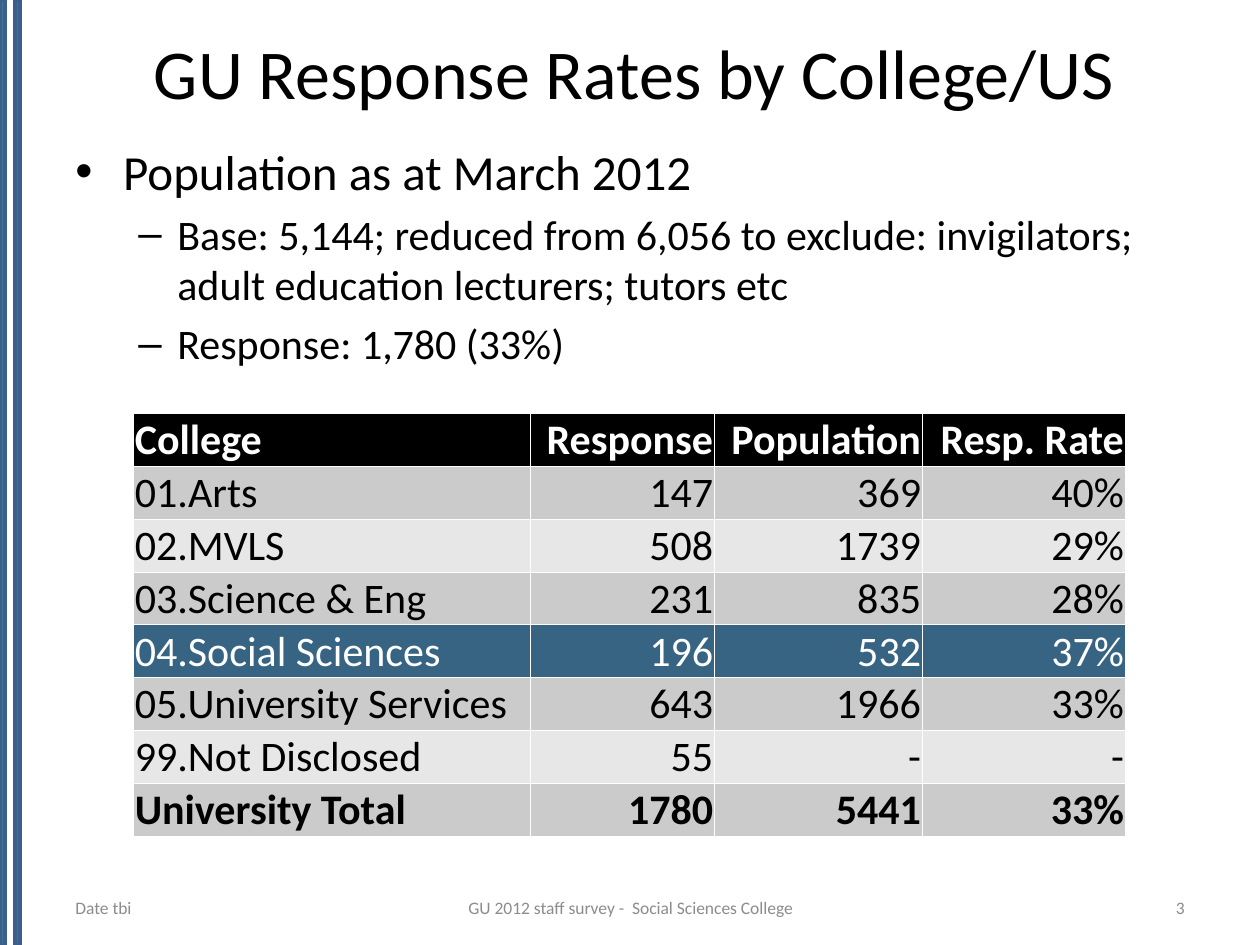
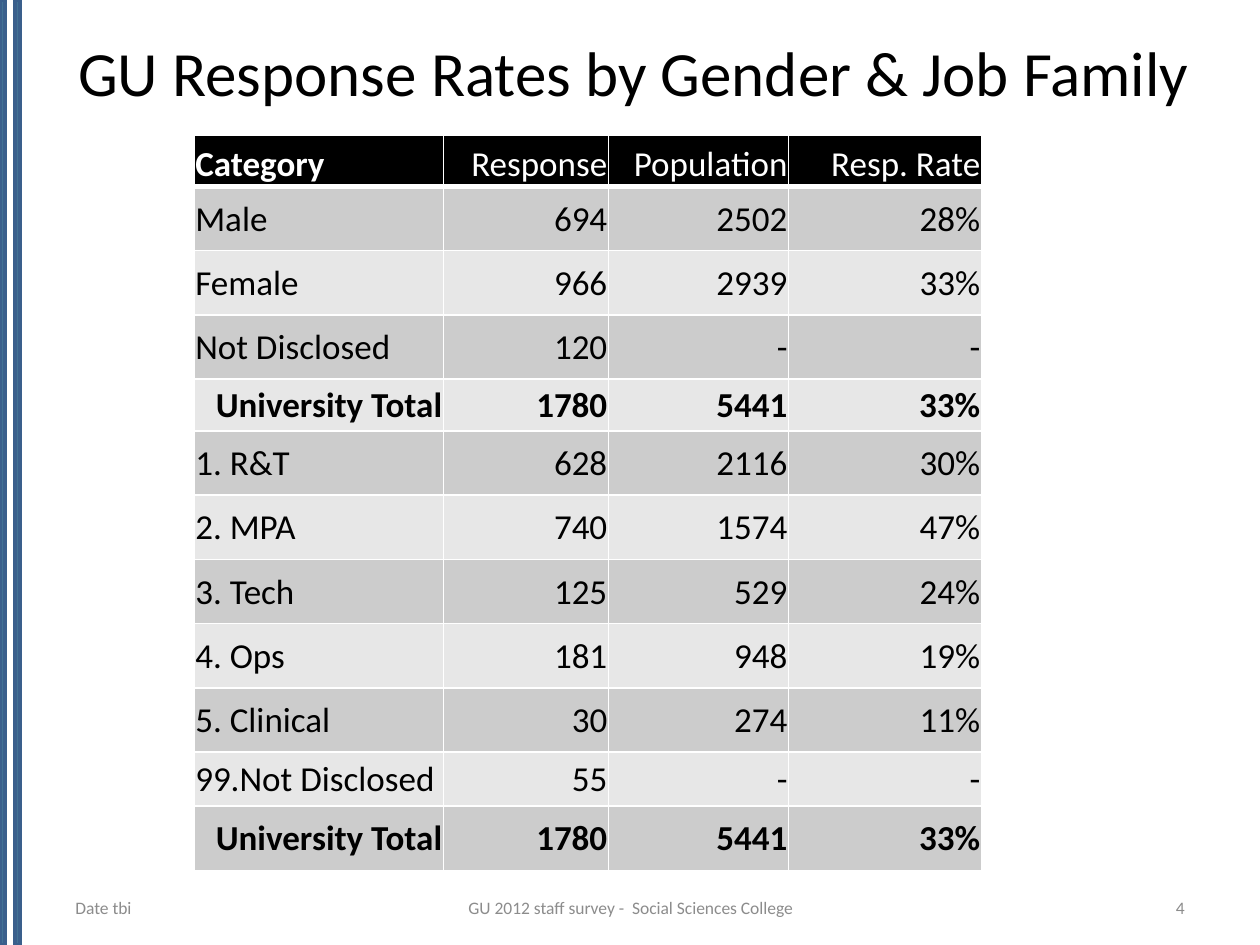
"""Build two staff survey slides with response rate tables."""
from dataclasses import dataclass, field

from lxml import etree
from pptx import Presentation
from pptx.dml.color import RGBColor
from pptx.enum.shapes import MSO_SHAPE
from pptx.enum.text import MSO_ANCHOR, PP_ALIGN
from pptx.oxml.ns import qn
from pptx.slide import Slide
from pptx.table import _Cell
from pptx.text.text import TextFrame, _Paragraph
from pptx.util import Inches, Pt

RECTANGLE = MSO_SHAPE.RECTANGLE
TOP, MIDDLE, BOTTOM = MSO_ANCHOR.TOP, MSO_ANCHOR.MIDDLE, MSO_ANCHOR.BOTTOM
LEFT, CENTER, RIGHT = PP_ALIGN.LEFT, PP_ALIGN.CENTER, PP_ALIGN.RIGHT

FONT = "Calibri"
COLORS = {
    "black": "000000",
    "white": "FFFFFF",
    "footer": "8C8C8C",
    "stripe": "427294",
    "stripe_line": "3A5F8C",
    "college_band": "CBCBCB",
    "category_band": "CCCCCC",
    "light_band": "E7E7E7",
    "highlight": "376483",
}
STRIPE_LEFTS = (0, 0.12)
TOTAL_LABEL = "University Total"


@dataclass(frozen=True)
class Bullet:
    """Look of one level of the bullet list."""
    mark: str
    size: float
    indent: float
    hanging: float
    space_before: float


@dataclass(frozen=True)
class FooterPart:
    """One slot of the footer line."""
    left: float
    width: float
    align: PP_ALIGN
    text: str


@dataclass(frozen=True)
class RateTable:
    """A response rate table with its geometry and look."""
    left: float
    top: float
    columns: tuple[float, ...]
    row_height: float
    size: float
    band: str
    rows: list[tuple[str, ...]]
    border: float
    header_border: float
    header_anchor: MSO_ANCHOR = MIDDLE
    header_bold_columns: int = 4
    total_align: PP_ALIGN = LEFT
    highlighted: str = ""
    special_heights: dict[int, float] = field(default_factory=dict)


BULLETS = (
    Bullet("•", 28, 0.38, 0.38, 0),
    Bullet("–", 24, 0.81, 0.31, 4.8),
)
POPULATION_NOTES = (
    (0, "Population as at March 2012"),
    (1, "Base: 5,144; reduced from 6,056 to exclude: invigilators; "
        "adult education lecturers; tutors etc"),
    (1, "Response: 1,780 (33%)"),
)
MEASURES = ("Response", "Population", "Resp. Rate")
TOTAL_ROW = (TOTAL_LABEL, "1780", "5441", "33%")

COLLEGE_TABLE = RateTable(
    left=1.06, top=3.28, columns=(3.15, 1.46, 1.65, 1.61), row_height=0.42,
    size=24, band="college_band", border=0.5, header_border=0.5,
    highlighted="04.Social Sciences",
    rows=[
        ("College", *MEASURES),
        ("01.Arts", "147", "369", "40%"),
        ("02.MVLS", "508", "1739", "29%"),
        ("03.Science & Eng", "231", "835", "28%"),
        ("04.Social Sciences", "196", "532", "37%"),
        ("05.University Services", "643", "1966", "33%"),
        ("99.Not Disclosed", "55", "-", "-"),
        TOTAL_ROW,
    ],
)
CATEGORY_TABLE = RateTable(
    left=1.54, top=1.07, columns=(1.98, 1.31, 1.43, 1.53), row_height=0.51,
    size=20, band="category_band", border=1, header_border=3,
    header_anchor=BOTTOM, header_bold_columns=1, total_align=RIGHT,
    special_heights={0: 0.41, 4: 0.41, 10: 0.43},
    rows=[
        ("Category", *MEASURES),
        ("Male", "694", "2502", "28%"),
        ("Female", "966", "2939", "33%"),
        ("Not Disclosed", "120", "-", "-"),
        TOTAL_ROW,
        ("1. R&T", "628", "2116", "30%"),
        ("2. MPA", "740", "1574", "47%"),
        ("3. Tech", "125", "529", "24%"),
        ("4. Ops", "181", "948", "19%"),
        ("5. Clinical", "30", "274", "11%"),
        ("99.Not Disclosed", "55", "-", "-"),
        TOTAL_ROW,
    ],
)


def rgb(name: str) -> RGBColor:
    """Look up a named colour."""
    return RGBColor.from_string(COLORS[name])


def add_span(para: _Paragraph, text: str, size: float, color: str, bold: bool = False) -> None:
    """Add one formatted run to a paragraph."""
    span = para.add_run()
    span.text = text
    span.font.name = FONT
    span.font.size = Pt(size)
    span.font.bold = bold
    span.font.color.rgb = rgb(color)


def add_box(page: Slide, left: float, top: float, width: float, height: float,
            anchor: MSO_ANCHOR = MIDDLE) -> TextFrame:
    """Add a wrapping text box and return its text frame."""
    box = page.shapes.add_textbox(Inches(left), Inches(top), Inches(width), Inches(height))
    box.text_frame.word_wrap = True
    box.text_frame.vertical_anchor = anchor
    return box.text_frame


def add_stripes(page: Slide) -> None:
    """Draw the two stripes along the left edge."""
    for left in STRIPE_LEFTS:
        stripe = page.shapes.add_shape(RECTANGLE, Inches(left), 0, Inches(0.04), Inches(7.5))
        stripe.shadow.inherit = False
        stripe.fill.solid()
        stripe.fill.fore_color.rgb = rgb("stripe")
        stripe.line.color.rgb = rgb("stripe_line")
        stripe.line.width = Pt(2)


def add_title(page: Slide, text: str, size: float) -> None:
    """Add the centred slide title."""
    para = add_box(page, 0.5, 0.13, 9.06, 0.87).paragraphs[0]
    para.alignment = CENTER
    add_span(para, text, size, "black")


def add_footer(page: Slide, number: int) -> None:
    """Add the date, survey name and slide number."""
    parts = (
        FooterPart(0.5, 2.33, LEFT, "Date tbi"),
        FooterPart(3.42, 3.17, CENTER, "GU 2012 staff survey -  Social Sciences College"),
        FooterPart(7.17, 2.33, RIGHT, str(number)),
    )
    for part in parts:
        para = add_box(page, part.left, 7.06, part.width, 0.29).paragraphs[0]
        para.alignment = part.align
        add_span(para, part.text, 10, "footer")


def add_notes_list(page: Slide) -> None:
    """Add the bullet list about the surveyed population."""
    frame = add_box(page, 0.5, 1.07, 9.06, 5.91, TOP)
    for index, (level, text) in enumerate(POPULATION_NOTES):
        bullet = BULLETS[level]
        para = frame.add_paragraph() if index else frame.paragraphs[0]
        para.level = level
        para.space_before = Pt(bullet.space_before)
        properties = para._p.get_or_add_pPr()
        properties.set("marL", str(Inches(bullet.indent)))
        properties.set("indent", str(-Inches(bullet.hanging)))
        etree.SubElement(properties, qn("a:buFont"), typeface="Arial")
        etree.SubElement(properties, qn("a:buChar"), char=bullet.mark)
        add_span(para, text, bullet.size, "black")


def set_borders(cell: _Cell, width: float, bottom: float) -> None:
    """Give a cell white borders on its four sides."""
    properties = cell._tc.get_or_add_tcPr()
    sides = {"a:lnL": width, "a:lnR": width, "a:lnT": width, "a:lnB": bottom}
    for position, (tag, points) in enumerate(sides.items()):
        line = etree.Element(qn(tag), w=str(Pt(points)))
        fill = etree.SubElement(line, qn("a:solidFill"))
        etree.SubElement(fill, qn("a:srgbClr"), val=COLORS["white"])
        properties.insert(position, line)


def row_colors(spec: RateTable, row: int) -> tuple[str, str]:
    """Return the fill and text colours of a table row."""
    if row == 0:
        return "black", "white"
    if spec.rows[row][0] == spec.highlighted:
        return "highlight", "white"
    return (spec.band if row % 2 else "light_band"), "black"


def add_rate_table(page: Slide, spec: RateTable) -> None:
    """Draw a response rate table."""
    heights = [spec.special_heights.get(row, spec.row_height) for row in range(len(spec.rows))]
    table = page.shapes.add_table(
        len(spec.rows), len(spec.columns), Inches(spec.left), Inches(spec.top),
        Inches(sum(spec.columns)), Inches(sum(heights))).table
    table.horz_banding = False
    for column, width in zip(table.columns, spec.columns):
        column.width = Inches(width)
    for row, values in enumerate(spec.rows):
        table.rows[row].height = Inches(heights[row])
        fill, color = row_colors(spec, row)
        is_header, is_total = row == 0, values[0] == TOTAL_LABEL
        label_align = spec.total_align if is_total else LEFT
        for column, text in enumerate(values):
            cell = table.cell(row, column)
            cell.margin_left = cell.margin_right = cell.margin_top = Inches(0.01)
            cell.margin_bottom = 0
            cell.vertical_anchor = spec.header_anchor if is_header else MIDDLE
            cell.fill.solid()
            cell.fill.fore_color.rgb = rgb(fill)
            set_borders(cell, spec.border, spec.header_border if is_header else spec.border)
            para = cell.text_frame.paragraphs[0]
            para.alignment = RIGHT if column else label_align
            bold = is_total or (is_header and column < spec.header_bold_columns)
            add_span(para, text, spec.size, color, bold)


def add_page(deck: Presentation, title: str, title_size: float, number: int) -> Slide:
    """Add a slide with the shared stripes, title and footer."""
    page = deck.slides.add_slide(deck.slide_layouts[6])
    add_stripes(page)
    add_title(page, title, title_size)
    add_footer(page, number)
    return page


def main() -> None:
    """Build and save the deck."""
    deck = Presentation()
    deck.slide_width, deck.slide_height = Inches(10), Inches(7.5)
    college_page = add_page(deck, "GU Response Rates by College/US", 40, 3)
    add_notes_list(college_page)
    add_rate_table(college_page, COLLEGE_TABLE)
    category_page = add_page(deck, "GU Response Rates by Gender & Job Family", 36, 4)
    add_rate_table(category_page, CATEGORY_TABLE)
    deck.save("out.pptx")


if __name__ == "__main__":
    main()
